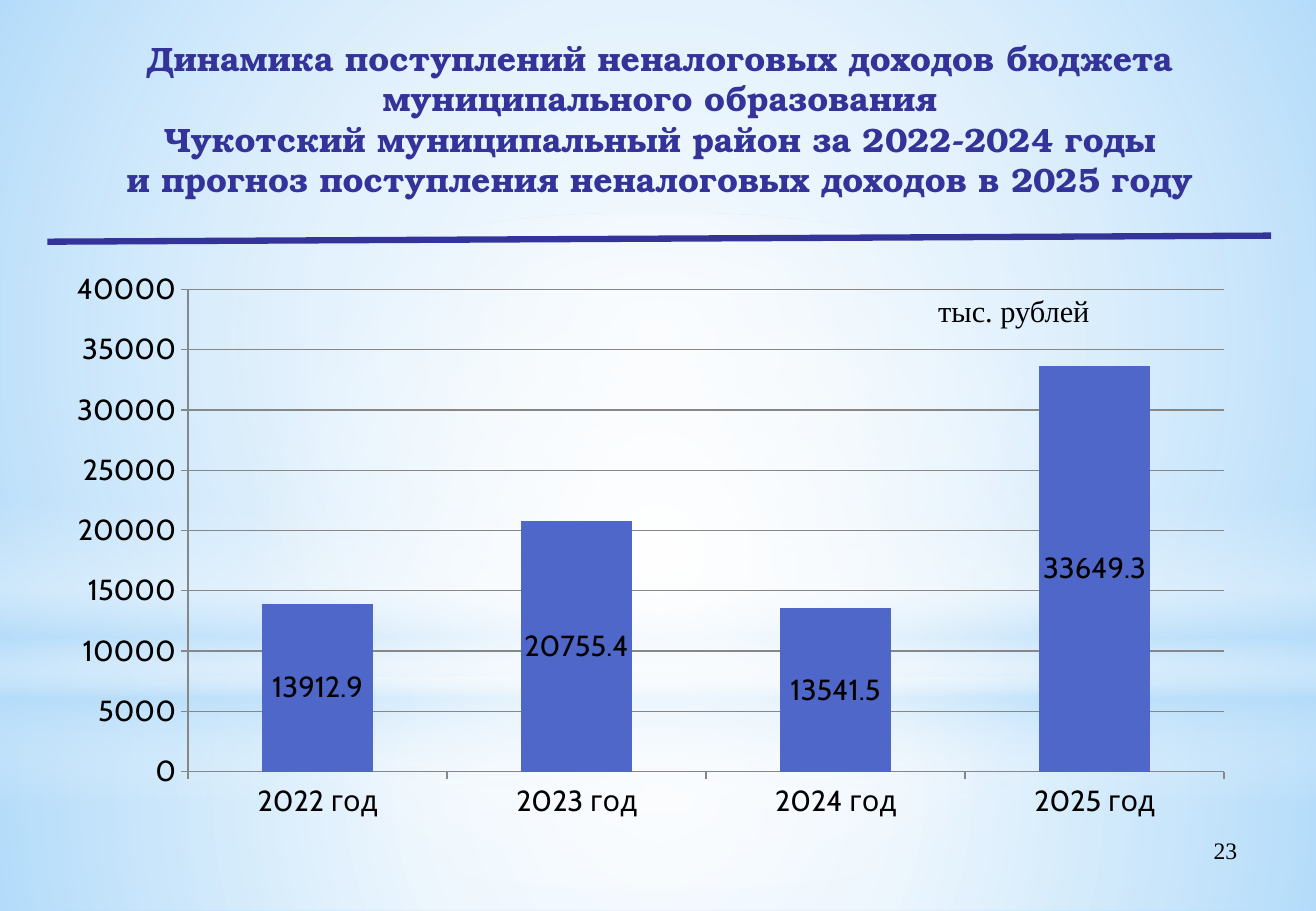
from lxml.etree import SubElement
from pptx import Presentation
from pptx.chart.data import CategoryChartData
from pptx.dml.color import RGBColor
from pptx.enum.chart import XL_CHART_TYPE as CT, XL_LABEL_POSITION as LP, XL_TICK_MARK as TM
from pptx.enum.shapes import MSO_CONNECTOR as CONN, MSO_SHAPE as SH
from pptx.enum.text import MSO_ANCHOR as ANCHOR, MSO_AUTO_SIZE as AUTO, PP_ALIGN as AL
from pptx.oxml import parse_xml
from pptx.oxml.ns import nsdecls, qn
from pptx.util import Inches, Pt

COLORS = {"sky": "B4DCFA", "white": "FFFFFF", "navy": "333399",
          "bar": "4E67C8", "grid": "878787", "text": "000000"}
SERIF, TITLE_FONT, CHART_FONT = "Times New Roman", "TeX Gyre Bonum", "Cabin"
RADIAL = ('<a:path path="circle"><a:fillToRect l="50000" t="50000" '
          'r="50000" b="50000"/></a:path>')
LINEAR = '<a:lin ang="5400000" scaled="0"/>'


def rgb(name):
    return RGBColor.from_string(COLORS[name])


class SlideBuilder:
    def __init__(self, prs):
        self.slide = prs.slides.add_slide(prs.slide_layouts[6])
        self.shapes = self.slide.shapes

    def background(self, color):
        fill = self.slide.background.fill
        fill.solid()
        fill.fore_color.rgb = rgb(color)

    def glow(self, kind, box, stops, direction=RADIAL):
        """Shape with a gradient; stops are (position %, colour, opacity %)."""
        sp = self.shapes.add_shape(kind, *map(Inches, box))
        sp.shadow.inherit = False
        sp.line.fill.background()
        sp.fill.background()
        gs = "".join(
            f'<a:gs pos="{pos * 1000}"><a:srgbClr val="{COLORS[color]}">'
            f'<a:alpha val="{alpha * 1000}"/></a:srgbClr></a:gs>'
            for pos, color, alpha in stops)
        grad = parse_xml(f'<a:gradFill {nsdecls("a")} rotWithShape="1">'
                         f'<a:gsLst>{gs}</a:gsLst>{direction}</a:gradFill>')
        pr = sp._element.spPr
        pr.replace(pr.find(qn("a:noFill")), grad)

    def text(self, box, lines, font, size, color="text", bold=False,
             align=AL.LEFT, anchor=ANCHOR.TOP, wrap=True):
        tf = self.shapes.add_textbox(*map(Inches, box)).text_frame
        tf.word_wrap = wrap
        tf.auto_size = AUTO.NONE if wrap else AUTO.SHAPE_TO_FIT_TEXT
        tf.vertical_anchor = anchor
        for i, line in enumerate(lines):
            p = tf.add_paragraph() if i else tf.paragraphs[0]
            p.alignment = align
            r = p.add_run()
            r.text = line
            r.font.name, r.font.size, r.font.bold = font, Pt(size), bold
            r.font.color.rgb = rgb(color)

    def line(self, start, end, color, width):
        c = self.shapes.add_connector(CONN.STRAIGHT, *map(Inches, start + end))
        c.line.color.rgb = rgb(color)
        c.line.width = Pt(width)
        SubElement(c._element.spPr, qn("a:effectLst"))

    def column_chart(self, box, cats, values, size, plot_area):
        data = CategoryChartData(number_format="0.0")
        data.categories = cats
        data.add_series("Series 1", values)
        chart = self.shapes.add_chart(CT.COLUMN_STACKED, *map(Inches, box), data).chart
        chart.has_legend = chart.has_title = False
        chart.font.name, chart.font.size = CHART_FONT, Pt(size)
        chart.font.color.rgb = rgb("text")

        # Columns and their labels
        plot = chart.plots[0]
        plot.gap_width, plot.overlap, plot.vary_by_categories = 135, 100, False
        fill = plot.series[0].format.fill
        fill.solid()
        fill.fore_color.rgb = rgb("bar")
        plot.has_data_labels = True
        labels = plot.data_labels
        labels.show_value = True
        labels.number_format, labels.number_format_is_linked = "0.0", False
        labels.position = LP.CENTER

        # Axes
        for axis in (chart.category_axis, chart.value_axis):
            axis.major_tick_mark, axis.minor_tick_mark = TM.OUTSIDE, TM.NONE
            axis.format.line.color.rgb = rgb("grid")
        axis = chart.value_axis
        axis.minimum_scale, axis.maximum_scale, axis.major_unit = 0, 40000, 5000
        axis.tick_labels.number_format = "0"
        axis.tick_labels.number_format_is_linked = False
        axis.has_major_gridlines = True
        axis.major_gridlines.format.line.color.rgb = rgb("grid")

        # Inner plot position, as fractions of the chart
        area = chart._chartSpace.chart.plotArea
        for old in area.findall(qn("c:layout")):
            area.remove(old)
        x, y, w, h = plot_area
        area.insert(0, parse_xml(
            f'<c:layout {nsdecls("c")}><c:manualLayout><c:layoutTarget val="inner"/>'
            f'<c:xMode val="edge"/><c:yMode val="edge"/><c:x val="{x}"/>'
            f'<c:y val="{y}"/><c:w val="{w}"/><c:h val="{h}"/>'
            '</c:manualLayout></c:layout>'))


def main():
    prs = Presentation()
    prs.slide_width, prs.slide_height = Inches(10.84), Inches(7.5)
    s = SlideBuilder(prs)

    # Soft sky backdrop
    s.background("sky")
    s.glow(SH.RECTANGLE, (0, 5.58, 10.84, 1.92),
           [(0, "white", 91), (37, "white", 76), (100, "sky", 79)])
    s.glow(SH.RECTANGLE, (0, 0, 10.84, 5.58),
           [(0, "white", 89), (48, "white", 62), (100, "sky", 79)])
    s.glow(SH.RECTANGLE, (0, 4.12, 10.84, 2.5),
           [(0, "white", 0), (29, "white", 30), (45, "sky", 40),
            (55, "white", 26), (65, "sky", 60), (100, "white", 0)], LINEAR)
    s.glow(SH.OVAL, (0, 1.75, 10.84, 5.58), [(0, "white", 100), (56, "white", 0)])

    # Page number, title and rule
    s.text((7.76, 6.83, 2.53, 0.52), ["23"], SERIF, 14, align=AL.RIGHT)
    s.text((0.56, 0.19, 9.75, 1.57),
           ["Динамика поступлений неналоговых доходов бюджета муниципального образования",
            "Чукотский муниципальный район за 2022-2024 годы",
            "и прогноз поступления неналоговых доходов в 2025 году"],
           TITLE_FONT, 20, "navy", True, AL.CENTER, ANCHOR.MIDDLE)
    s.line((0.39, 1.99), (10.47, 1.94), "navy", 3.75)

    # Revenue chart and its unit
    s.column_chart((0.47, 2.15, 9.81, 4.67),
                   [f"{year} год" for year in range(2022, 2026)],
                   [13912.9, 20755.4, 13541.5, 33649.3], 17.2,
                   (0.11, 0.05, 0.87, 0.85))
    s.text((7.63, 2.36, 1.46, 0.4), ["тыс. рублей"], SERIF, 18, wrap=False)

    prs.save("out.pptx")


if __name__ == "__main__":
    main()
